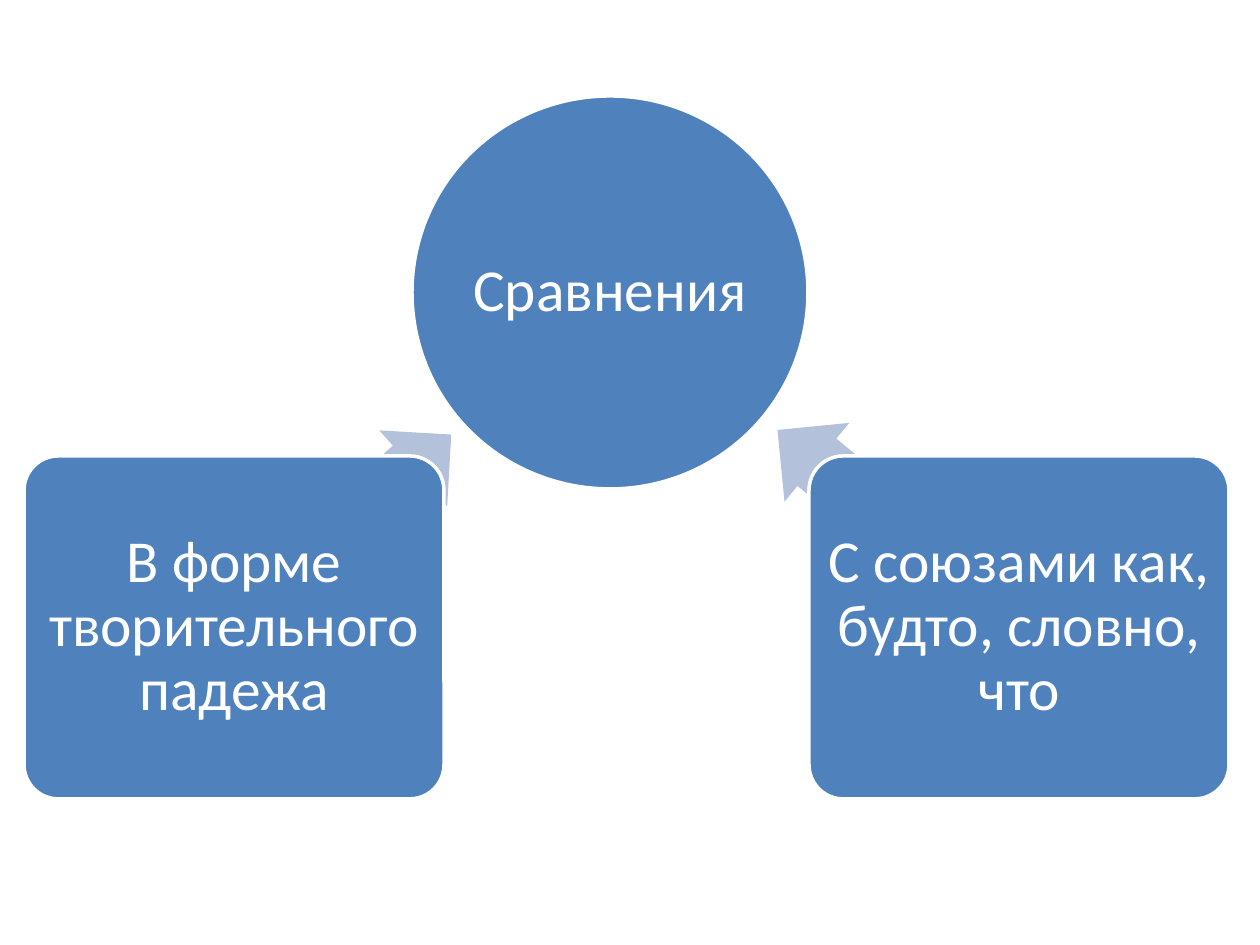
from pptx import Presentation
from pptx.dml.color import RGBColor
from pptx.enum.shapes import MSO_SHAPE
from pptx.enum.text import MSO_ANCHOR, PP_ALIGN
from pptx.util import Emu, Pt

EMU_PER_PX = 914400 / 126
COLORS = {"node": "4F81BD", "arrow": "B3C1DB", "white": "FFFFFF"}
FONT = "Calibri"


def px(value):
    return Emu(round(value * EMU_PER_PX))


def color(name):
    return RGBColor.from_string(COLORS[name])


def add_filled_shape(slide, kind, box, fill, adjustments=()):
    shape = slide.shapes.add_shape(kind, *map(px, box))
    shape.shadow.inherit = False
    shape.fill.solid()
    shape.fill.fore_color.rgb = color(fill)
    for index, value in enumerate(adjustments):
        shape.adjustments[index] = value
    return shape


def add_node(slide, kind, box, text, margin, adjustments=()):
    shape = add_filled_shape(slide, kind, box, "node", adjustments)
    shape.line.color.rgb = color("white")
    shape.line.width = Pt(2)
    frame = shape.text_frame
    frame.word_wrap = True
    frame.vertical_anchor = MSO_ANCHOR.MIDDLE
    frame.margin_left = frame.margin_right = px(margin)
    frame.margin_top = frame.margin_bottom = px(margin)
    paragraph = frame.paragraphs[0]
    paragraph.alignment = PP_ALIGN.CENTER
    paragraph.line_spacing = 0.9
    run = paragraph.add_run()
    run.text = text
    run.font.name = FONT
    run.font.size = Pt(34)
    run.font.color.rgb = color("white")


def add_arrow(slide, box, rotation):
    arrow = add_filled_shape(slide, MSO_SHAPE.LEFT_ARROW, box, "arrow", (0.6, 0.5))
    arrow.line.fill.background()
    arrow.rotation = rotation


def add_branch(slide, box, text, arrow_offset, arrow_width, rotation):
    left, top, width, height = box
    offset_x, offset_y = arrow_offset
    add_arrow(slide, (left + offset_x, top + offset_y, arrow_width, 102), rotation)
    add_node(slide, MSO_SHAPE.ROUNDED_RECTANGLE, box, text, 9, (0.1,))


def add_converging_diagram(slide, box):
    left, top, width, height = box
    branch_width, branch_height = 420, 343
    branch_top = top + height - branch_height
    add_node(slide, MSO_SHAPE.OVAL, (left + 388, top, 396, 393), "Сравнения", 3)
    add_branch(slide, (left, branch_top, branch_width, branch_height),
               "В форме творительного падежа", (174, 24), 290, 138.3)
    add_branch(slide, (left + width - branch_width, branch_top, branch_width, branch_height),
               "С союзами как, будто, словно, что", (-67, 22), 312, 39.4)


def main():
    presentation = Presentation()
    presentation.slide_width = px(1260)
    presentation.slide_height = px(945)
    slide = presentation.slides.add_slide(presentation.slide_layouts[6])
    add_converging_diagram(slide, (24, 96, 1205, 703))
    presentation.save("out.pptx")


if __name__ == "__main__":
    main()
